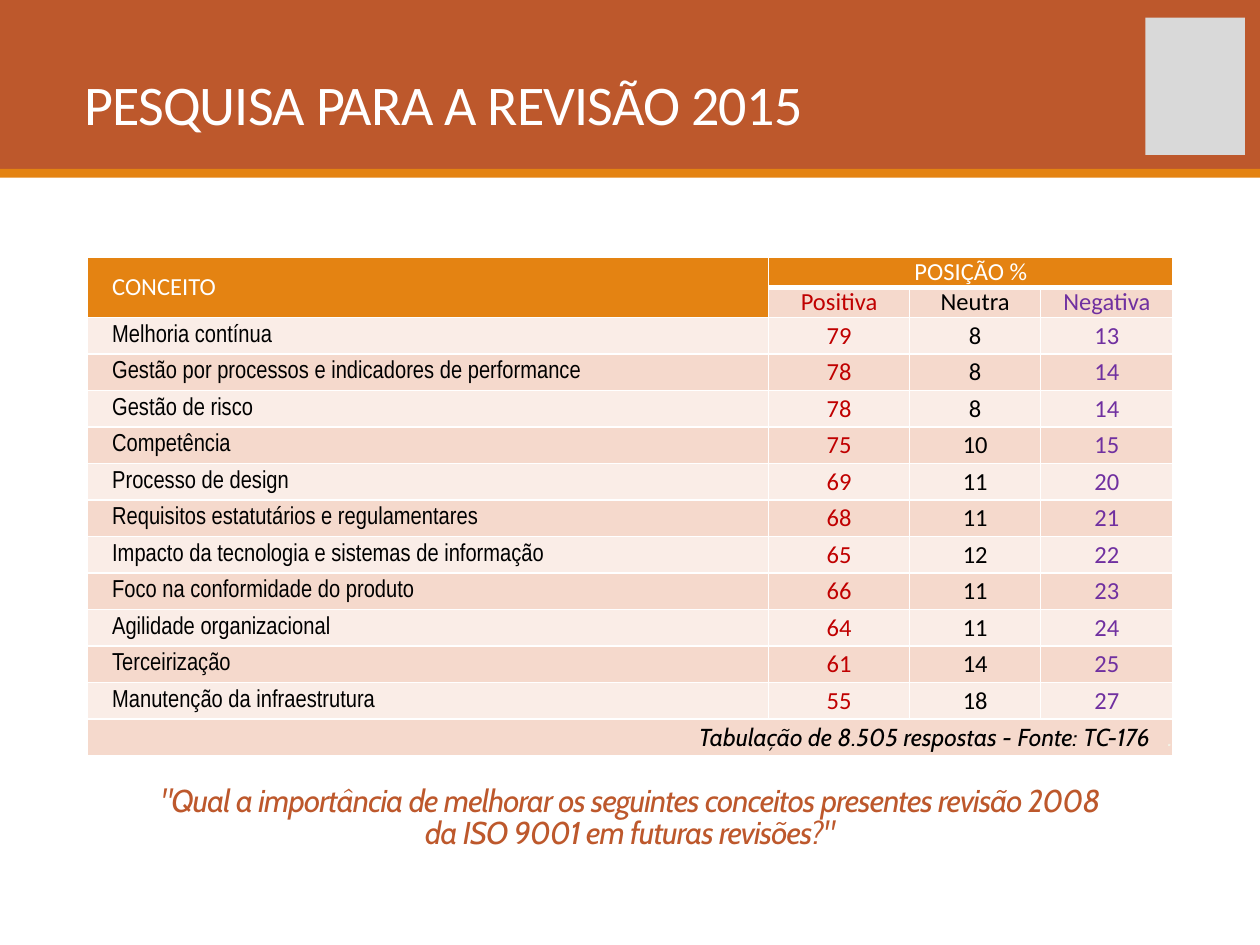
from lxml.etree import SubElement
from pptx import Presentation
from pptx.dml.color import RGBColor
from pptx.enum.shapes import MSO_SHAPE
from pptx.enum.text import MSO_ANCHOR, PP_ALIGN
from pptx.oxml.ns import qn
from pptx.util import Inches, Pt

COLORS = {
    "rust": "BD582C", "orange": "E48312", "gray": "D9D9D9", "white": "FFFFFF",
    "black": "000000", "red": "C00000", "purple": "7030A0",
    "light": "FAEDE7", "dark": "F5D9CC", "dot": "F3F2E6",
}
CONCEPTS = [
    ("Melhoria contínua", 79, 8, 13),
    ("Gestão por processos e indicadores de performance", 78, 8, 14),
    ("Gestão de risco", 78, 8, 14),
    ("Competência", 75, 10, 15),
    ("Processo de design", 69, 11, 20),
    ("Requisitos estatutários e regulamentares", 68, 11, 21),
    ("Impacto da tecnologia e sistemas de informação", 65, 12, 22),
    ("Foco na conformidade do produto", 66, 11, 23),
    ("Agilidade organizacional", 64, 11, 24),
    ("Terceirização", 61, 14, 25),
    ("Manutenção da infraestrutura", 55, 18, 27),
]
COLUMN_WIDTHS = [5.41, 1.12, 1.04, 1.05]
HEADER_HEIGHT, ROW_HEIGHT = 0.24, 0.29
POSITIONS = ["Positiva", "Neutra", "Negativa"]
POSITION_COLORS = ["red", "black", "purple"]


def rgb(name):
    return RGBColor.from_string(COLORS[name])


def format_run(run, size, font, color, italic=False, spacing=None):
    run.font.size = Pt(size)
    run.font.name = font
    run.font.color.rgb = rgb(color)
    run.font.italic = italic
    if spacing is not None:
        run._r.get_or_add_rPr().set("spc", str(round(spacing * 100)))


def add_block(slide, left, top, width, height, color):
    shape = slide.shapes.add_shape(MSO_SHAPE.RECTANGLE, Inches(left), Inches(top),
                                   Inches(width), Inches(height))
    shape.shadow.inherit = False
    shape.fill.solid()
    shape.fill.fore_color.rgb = rgb(color)
    shape.line.fill.background()


def fill_heading(shape, text, anchor, align, size, font, color, italic=False):
    text_frame = shape.text_frame
    text_frame.word_wrap = True
    text_frame.vertical_anchor = anchor
    text_frame.margin_left = text_frame.margin_right = Inches(0.1)
    text_frame.margin_top = text_frame.margin_bottom = 0
    text_frame.text = text
    paragraph = text_frame.paragraphs[0]
    paragraph.alignment = align
    paragraph.line_spacing = 0.85
    paragraph.space_before = Pt(0)
    format_run(paragraph.runs[0], size, font, color, italic, spacing=-0.5)


def set_borders(cell, top=1, bottom=1):
    properties = cell._tc.get_or_add_tcPr()
    widths = {"a:lnL": 1, "a:lnR": 1, "a:lnT": top, "a:lnB": bottom}
    for position, (tag, width) in enumerate(widths.items()):
        line = SubElement(properties, qn(tag), w=str(Pt(width)))
        fill = SubElement(line, qn("a:solidFill"))
        SubElement(fill, qn("a:srgbClr"), val=COLORS["white"])
        properties.insert(position, line)


def fill_cell(cell, text, color, font="Calibri", align=PP_ALIGN.CENTER, indent=0, italic=False):
    cell.text = text
    paragraph = cell.text_frame.paragraphs[0]
    paragraph.alignment = align
    if indent:
        paragraph._p.get_or_add_pPr().set("marL", str(Inches(indent)))
    format_run(paragraph.runs[0], 14, font, color, italic)
    return paragraph


def style_cells(table):
    last_row = len(table.rows) - 1
    for row_index, row in enumerate(table.rows):
        for column_index, cell in enumerate(row.cells):
            cell.margin_left = cell.margin_right = cell.margin_top = cell.margin_bottom = 0
            cell.vertical_anchor = MSO_ANCHOR.MIDDLE
            is_header = row_index == 0 or (row_index == 1 and column_index == 0)
            band = "dark" if row_index % 2 or row_index == last_row else "light"
            cell.fill.solid()
            cell.fill.fore_color.rgb = rgb("orange" if is_header else band)
            below_header = row_index == 1 and column_index > 0
            header_end = is_header and (row_index == 1 or column_index > 0)
            set_borders(cell, top=3 if below_header else 1, bottom=3 if header_end else 1)


def add_survey_table(slide):
    heights = [HEADER_HEIGHT] * 2 + [ROW_HEIGHT] * (len(CONCEPTS) + 1)
    last_row = len(heights) - 1
    frame = slide.shapes.add_table(len(heights), len(COLUMN_WIDTHS), Inches(0.69), Inches(2.04),
                                   Inches(sum(COLUMN_WIDTHS)), Inches(sum(heights)))
    table = frame.table
    table.first_row = table.horz_banding = False
    for column, width in zip(table.columns, COLUMN_WIDTHS):
        column.width = Inches(width)
    for row, height in zip(table.rows, heights):
        row.height = Inches(height)
    style_cells(table)

    # Header
    table.cell(0, 0).merge(table.cell(1, 0))
    table.cell(0, 1).merge(table.cell(0, 3))
    fill_cell(table.cell(0, 0), "CONCEITO", "white", align=PP_ALIGN.LEFT, indent=0.2)
    fill_cell(table.cell(0, 1), "POSIÇÃO %", "white")

    # Position names and survey results
    for row_index, (concept, *values) in enumerate([("", *POSITIONS), *CONCEPTS], start=1):
        if concept:
            fill_cell(table.cell(row_index, 0), concept, "black", "Arial Narrow",
                      PP_ALIGN.LEFT, indent=0.2)
        for column_index, (value, color) in enumerate(zip(values, POSITION_COLORS), start=1):
            fill_cell(table.cell(row_index, column_index), str(value), color)

    # Source line
    table.cell(last_row, 0).merge(table.cell(last_row, 3))
    paragraph = fill_cell(table.cell(last_row, 0), "Tabulação de 8.505 respostas - Fonte: TC-176",
                          "black", "Cabin", PP_ALIGN.RIGHT, indent=0.2, italic=True)
    for text, spacing in [(" ", 7), (".", 0)]:
        run = paragraph.add_run()
        run.text = text
        format_run(run, 14, "Cabin", "dot", italic=True, spacing=spacing)


def main():
    presentation = Presentation()
    presentation.slide_width, presentation.slide_height = Inches(10), Inches(7.5)
    slide = presentation.slides.add_slide(presentation.slide_layouts[5])

    # Header band, accent strip and logo block
    add_block(slide, 0, 0, 10, 1.34, "rust")
    add_block(slide, 0, 1.34, 10, 0.07, "orange")
    add_block(slide, 9.09, 0.14, 0.79, 1.09, "gray")

    # Survey question
    question = slide.shapes.title
    question.left, question.top = Inches(1.06), Inches(6.03)
    question.width, question.height = Inches(7.88), Inches(0.94)
    fill_heading(question, "\"Qual a importância de melhorar os seguintes conceitos presentes "
                 "revisão 2008 da ISO 9001 em futuras revisões?\"",
                 MSO_ANCHOR.MIDDLE, PP_ALIGN.CENTER, 18, "Cabin", "rust", italic=True)

    add_survey_table(slide)

    # Heading in the band
    heading = slide.shapes.add_textbox(Inches(0.57), Inches(0.21), Inches(8.51), Inches(0.88))
    fill_heading(heading, "PESQUISA PARA A REVISÃO 2015",
                 MSO_ANCHOR.BOTTOM, PP_ALIGN.LEFT, 32, "Calibri", "white")

    presentation.save("out.pptx")


if __name__ == "__main__":
    main()
